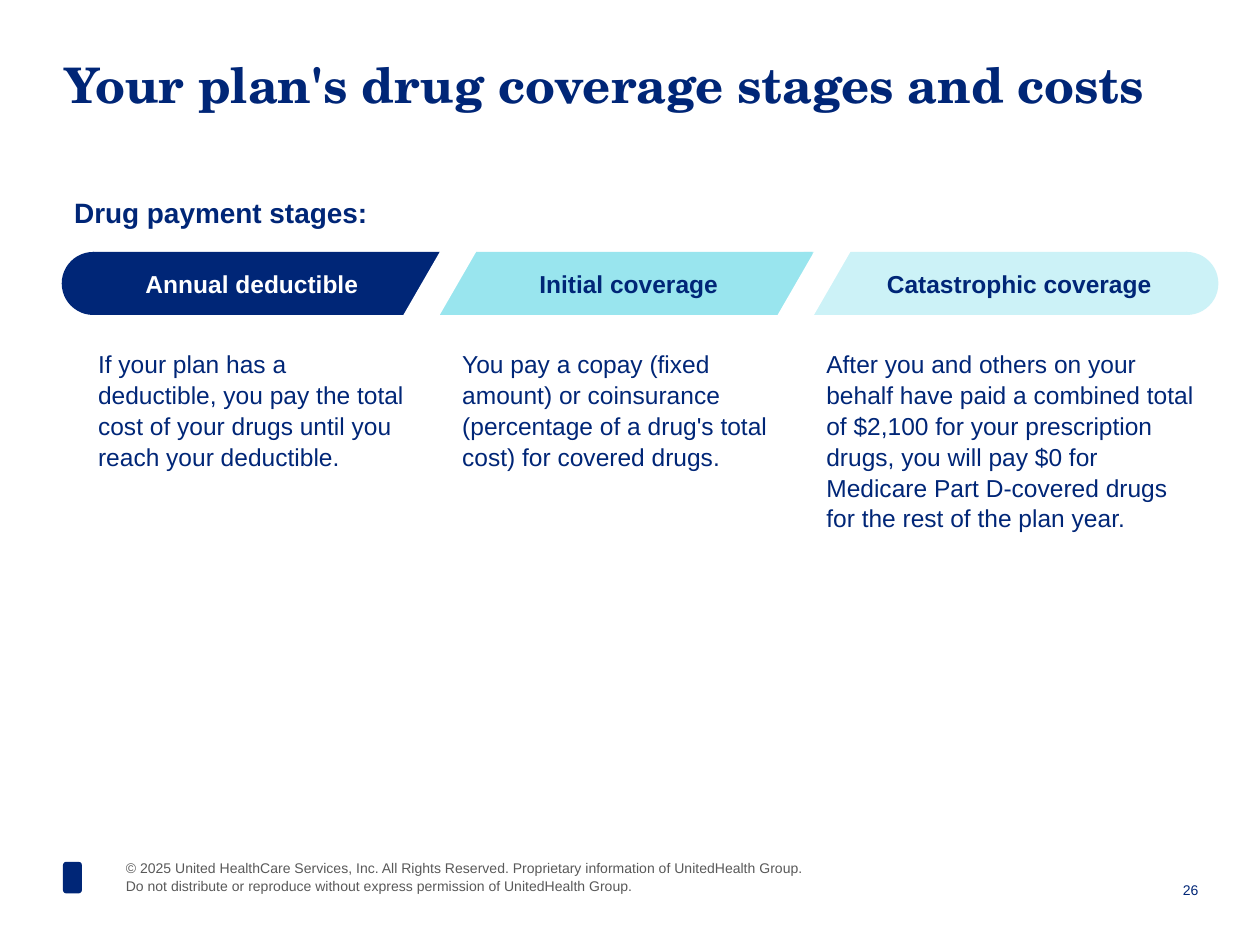
from pptx import Presentation
from pptx.dml.color import RGBColor
from pptx.enum.shapes import MSO_SHAPE
from pptx.enum.text import MSO_ANCHOR, PP_ALIGN
from pptx.util import Inches, Pt

NAVY = RGBColor(0x00, 0x26, 0x77)
TEAL = RGBColor(0x99, 0xE5, 0xEE)
PALE_TEAL = RGBColor(0xCC, 0xF2, 0xF7)
GRAY = RGBColor(0x59, 0x59, 0x59)
WHITE = RGBColor(0xFF, 0xFF, 0xFF)

BAR_TOP, BAR_HEIGHT = 2, 0.5
BODY_TOP, BODY_HEIGHT = 2.71, 2.35


def write_text(text_frame, text, size=14, color=NAVY, bold=False, font="Arial",
               align=PP_ALIGN.LEFT, anchor=MSO_ANCHOR.TOP, line_spacing=1.0):
    text_frame.word_wrap = True
    text_frame.vertical_anchor = anchor
    text_frame.text = text
    for paragraph in text_frame.paragraphs:
        paragraph.alignment = align
        paragraph.line_spacing = line_spacing
        paragraph.font.name = font
        paragraph.font.size = Pt(size)
        paragraph.font.bold = bold
        paragraph.font.color.rgb = color


class SlideBuilder:
    def __init__(self, slide, title_font="TeX Gyre Schola"):
        self.slide = slide
        self.title_font = title_font

    def title(self, text, left, top, width, height):
        title = self.slide.shapes.title
        title.left, title.top = Inches(left), Inches(top)
        title.width, title.height = Inches(width), Inches(height)
        write_text(title.text_frame, text, size=28, bold=True, font=self.title_font)

    def text(self, text, left, top, width, height, **text_format):
        box = self.slide.shapes.add_textbox(
            Inches(left), Inches(top), Inches(width), Inches(height))
        write_text(box.text_frame, text, **text_format)

    def block(self, kind, color, left, top, width, height, rotation=0):
        shape = self.slide.shapes.add_shape(
            kind, Inches(left), Inches(top), Inches(width), Inches(height))
        shape.shadow.inherit = False
        shape.fill.solid()
        shape.fill.fore_color.rgb = color
        shape.line.fill.background()
        shape.rotation = rotation

    def bar(self, color, left, width):
        self.block(MSO_SHAPE.RECTANGLE, color, left, BAR_TOP, width, BAR_HEIGHT)

    def bar_cap(self, color, left):
        """Round off one end of the stage bar."""
        self.block(MSO_SHAPE.OVAL, color, left, BAR_TOP, BAR_HEIGHT, BAR_HEIGHT)

    def slanted_gap(self, left):
        self.block(MSO_SHAPE.RECTANGLE, WHITE, left, 1.52, 0.25, 1.41, rotation=30)


def main():
    presentation = Presentation()
    presentation.slide_width, presentation.slide_height = Inches(10), Inches(7.5)
    slide = presentation.slides.add_slide(presentation.slide_layouts[5])
    builder = SlideBuilder(slide)

    builder.title("Your plan's drug coverage stages and costs", 0.41, 0.38, 9.1, 1.2)
    builder.text("Drug payment stages:", 0.49, 1.5, 3.91, 0.42, size=16, bold=True)

    builder.bar(PALE_TEAL, 6.38, 3.04)
    builder.bar_cap(PALE_TEAL, 9.17)
    builder.bar(NAVY, 0.74, 3.04)
    builder.bar_cap(NAVY, 0.49)
    builder.bar(TEAL, 3.49, 2.96)
    for left in (3.38, 6.35):
        builder.slanted_gap(left)

    # Label, its color, left and width; description, its left and width
    stages = [
        ("Annual deductible", WHITE, 0.51, 2.98,
         "If your plan has a deductible, you pay the total cost of your drugs "
         "until you reach your deductible.", 0.68, 2.65),
        ("Initial coverage", NAVY, 3.53, 2.92,
         "You pay a copay (fixed amount) or coinsurance (percentage of a drug's "
         "total cost) for covered drugs.", 3.57, 2.65),
        ("Catastrophic coverage", NAVY, 6.51, 3.16,
         "After you and others on your behalf have paid a combined total of $2,100 "
         "for your prescription drugs, you will pay $0 for Medicare Part D-covered "
         "drugs for the rest of the plan year.", 6.46, 3.15),
    ]
    for label, color, left, width, description, body_left, body_width in stages:
        builder.text(label, left, BAR_TOP, width, BAR_HEIGHT, color=color, bold=True,
                     align=PP_ALIGN.CENTER, anchor=MSO_ANCHOR.MIDDLE)
        builder.text(description, body_left, BODY_TOP, body_width, BODY_HEIGHT,
                     line_spacing=1.05)

    builder.block(MSO_SHAPE.ROUNDED_RECTANGLE, NAVY, 0.5, 6.84, 0.15, 0.25)
    builder.text(
        "© 2025 United HealthCare Services, Inc. All Rights Reserved. "
        "Proprietary information of UnitedHealth Group.\n"
        "Do not distribute or reproduce without express permission of UnitedHealth Group.",
        0.9, 6.77, 5.79, 0.37, size=8, color=GRAY, line_spacing=1.05)
    builder.text("26", 9.22, 6.86, 0.39, 0.41, size=8,
                 align=PP_ALIGN.RIGHT, anchor=MSO_ANCHOR.MIDDLE)

    presentation.save("out.pptx")


if __name__ == "__main__":
    main()
